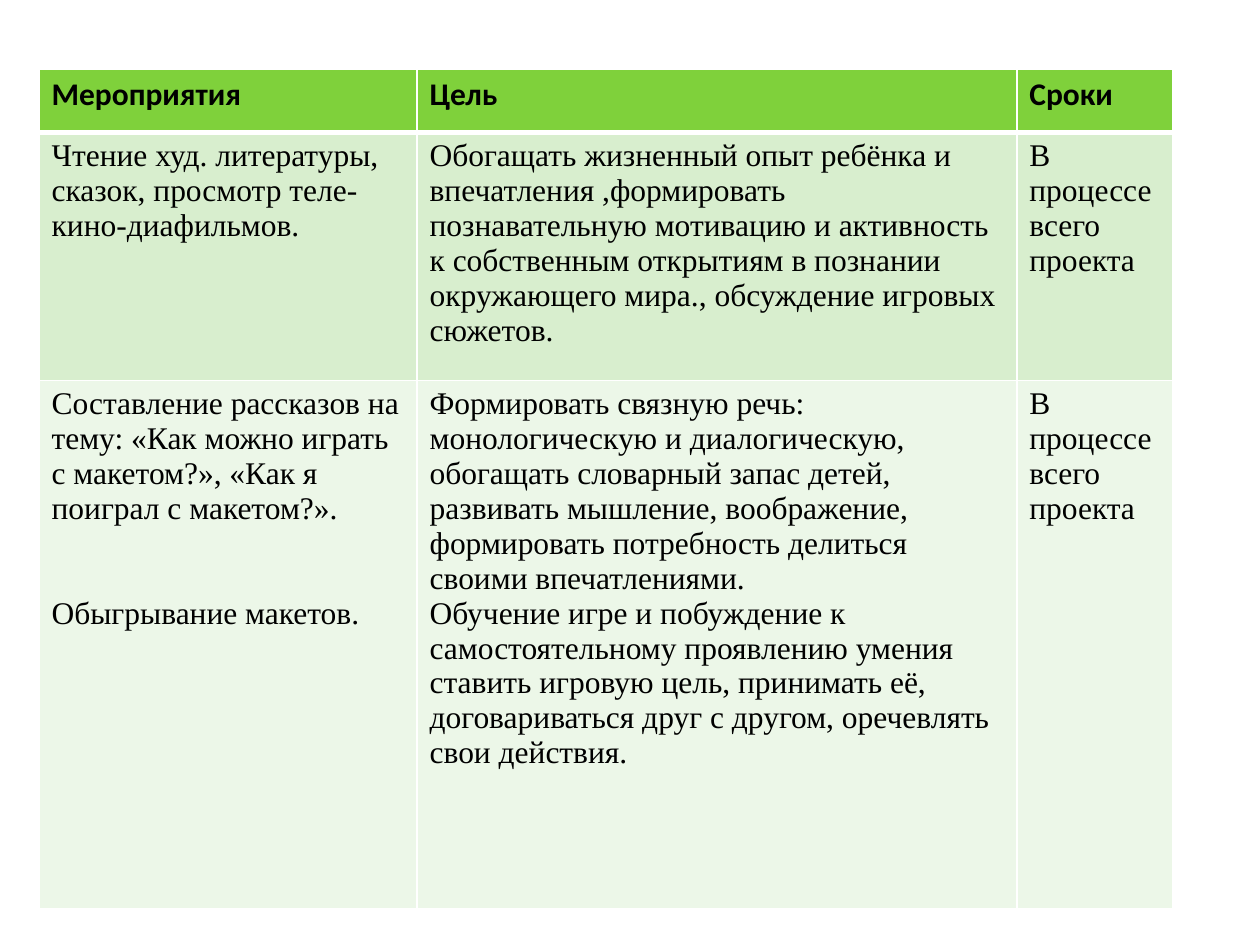
from dataclasses import dataclass

from lxml import etree
from pptx import Presentation
from pptx.dml.color import RGBColor
from pptx.oxml.ns import qn
from pptx.util import Inches, Pt

BLANK_LAYOUT = 6


@dataclass(frozen=True)
class Theme:
    row_fills: tuple = ("7FD13B", "D8EECE", "ECF7E8")
    border: str = "FFFFFF"
    text: str = "000000"
    header_font: str = "Calibri"
    body_font: str = "Times New Roman"
    size: float = 18
    thin: float = 1
    thick: float = 3
    activity_gap: float = 40


THEME = Theme()
COLUMN_WIDTHS = (3, 4.76, 1.24)
ROW_HEIGHTS = (0.5, 1.97, 4.19)
# Each cell is a list of paragraphs.
ROWS = [
    [["Мероприятия"], ["Цель"], ["Сроки"]],
    [
        ["Чтение худ. литературы, сказок, просмотр теле-кино-диафильмов."],
        ["Обогащать жизненный опыт ребёнка и впечатления ,формировать "
         "познавательную мотивацию и активность к собственным открытиям "
         "в познании окружающего мира., обсуждение игровых сюжетов."],
        ["В процессе всего проекта"],
    ],
    [
        ["Составление рассказов на тему: «Как можно играть с макетом?», "
         "«Как я поиграл с макетом?».",
         "Обыгрывание макетов."],
        ["Формировать связную речь: монологическую и диалогическую, "
         "обогащать словарный запас детей, развивать мышление, воображение, "
         "формировать потребность делиться своими впечатлениями.",
         "Обучение игре и побуждение к самостоятельному проявлению умения "
         "ставить игровую цель, принимать её, договариваться друг с другом, "
         "оречевлять свои действия."],
        ["В процессе всего проекта"],
    ],
]


def add_border(cell, side, width):
    line = etree.SubElement(cell._tc.get_or_add_tcPr(), qn(f"a:ln{side}"), w=str(Pt(width)))
    fill = etree.SubElement(line, qn("a:solidFill"))
    etree.SubElement(fill, qn("a:srgbClr"), val=THEME.border)


deck = Presentation()
deck.slide_width, deck.slide_height = Inches(10), Inches(7.5)
page = deck.slides.add_slide(deck.slide_layouts[BLANK_LAYOUT])

table = page.shapes.add_table(
    len(ROWS), len(COLUMN_WIDTHS), Inches(0.31), Inches(0.55),
    Inches(sum(COLUMN_WIDTHS)), Inches(sum(ROW_HEIGHTS))).table
for column, width in zip(table.columns, COLUMN_WIDTHS):
    column.width = Inches(width)
for row, height in zip(table.rows, ROW_HEIGHTS):
    row.height = Inches(height)

for row_index, row_texts in enumerate(ROWS):
    is_header = row_index == 0
    for column_index, paragraphs in enumerate(row_texts):
        cell = table.cell(row_index, column_index)
        for side in "LRTB":
            under_header = (is_header and side == "B") or (row_index == 1 and side == "T")
            add_border(cell, side, THEME.thick if under_header else THEME.thin)
        cell.fill.solid()
        cell.fill.fore_color.rgb = RGBColor.from_string(THEME.row_fills[row_index])

        for index, text in enumerate(paragraphs):
            para = cell.text_frame.add_paragraph() if index else cell.text_frame.paragraphs[0]
            if index and column_index == 0:
                para.space_before = Pt(THEME.activity_gap)
            span = para.add_run()
            span.text = text
            span.font.name = THEME.header_font if is_header else THEME.body_font
            span.font.size = Pt(THEME.size)
            span.font.bold = is_header
            span.font.color.rgb = RGBColor.from_string(THEME.text)

deck.save("out.pptx")
